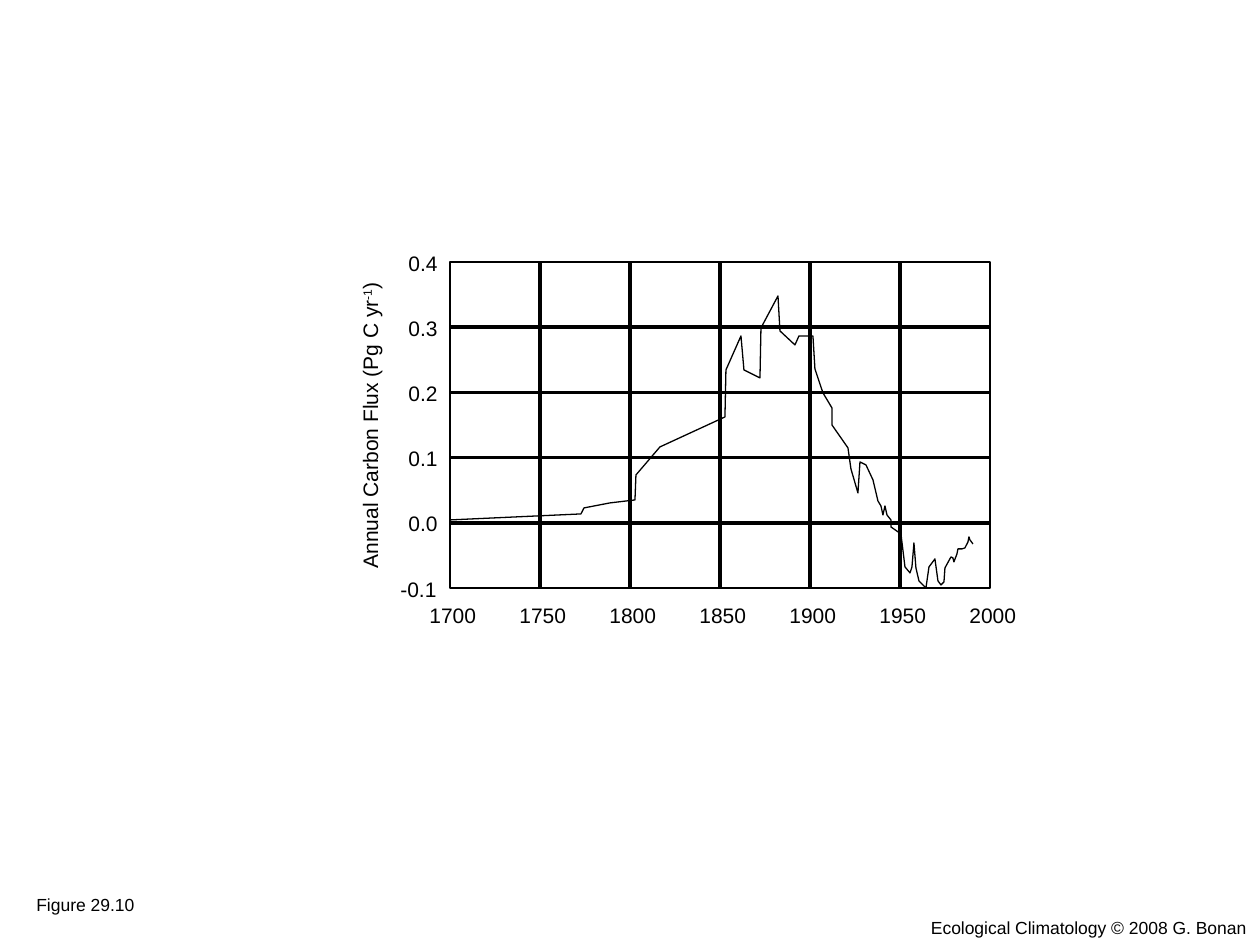
from pptx import Presentation
from pptx.dml.color import RGBColor
from pptx.enum.shapes import MSO_CONNECTOR
from pptx.enum.text import MSO_AUTO_SIZE, PP_ALIGN
from pptx.oxml.ns import qn
from pptx.util import Pt
from lxml.etree import SubElement

SCALE = 914400 / 126  # EMU in one px
COLORS = {"ink": "000000"}
FONT = "Arial"

YEARS = [1700, 1750, 1800, 1850, 1900, 1950, 2000]
FLUXES = ["0.4", "0.3", "0.2", "0.1", "0.0", "-0.1"]
# Curve points, in px from the top left corner of the plot
FLUX_CURVE = [
    (0, 258), (131, 252), (134, 246), (160, 241), (185, 238), (186, 213),
    (210, 185), (275, 155), (276, 108), (291, 74), (294, 108), (310, 116),
    (311, 66), (328, 34), (330, 69), (345, 83), (349, 74), (363, 74),
    (365, 107), (373, 131), (382, 146), (382, 163), (398, 186), (401, 207),
    (408, 231), (410, 200), (416, 203), (423, 218), (428, 239), (431, 244),
    (433, 253), (435, 244), (437, 253), (441, 258), (441, 265), (451, 272),
    (455, 305), (460, 311), (462, 305), (464, 281), (466, 306), (469, 319),
    (476, 326), (479, 305), (485, 297), (488, 319), (491, 323), (494, 320),
    (495, 306), (501, 295), (503, 296), (504, 300), (507, 292), (508, 287),
    (512, 287), (515, 286), (518, 280), (519, 275), (520, 278), (523, 282),
]


def px(length):
    return round(length * SCALE)


def ink():
    return RGBColor.from_string(COLORS["ink"])


def add_text(slide, box, runs, size=12, align=PP_ALIGN.LEFT):
    """Add one line of text; each run is (text, baseline shift)."""
    shape = slide.shapes.add_textbox(*map(px, box))
    frame = shape.text_frame
    frame.word_wrap = False
    frame.auto_size = MSO_AUTO_SIZE.SHAPE_TO_FIT_TEXT
    paragraph = frame.paragraphs[0]
    paragraph.alignment = align
    for text, baseline in runs:
        run = paragraph.add_run()
        run.text = text
        run.font.size = Pt(size)
        run.font.name = FONT
        run.font.color.rgb = ink()
        if baseline:
            run.font._element.set("baseline", str(baseline))
    return shape


def add_grid_line(slide, start, end):
    line = slide.shapes.add_connector(
        MSO_CONNECTOR.STRAIGHT, *map(px, (*start, *end)))
    line.line.color.rgb = ink()
    line.line.width = Pt(0)
    SubElement(line._element.spPr, qn("a:effectLst"))


def add_outline(slide, points, close=False):
    builder = slide.shapes.build_freeform(*points[0], scale=SCALE)
    builder.add_line_segments(points[1:], close=close)
    shape = builder.convert_to_shape()
    shape.shadow.inherit = False
    shape.fill.background()
    shape.line.color.rgb = ink()
    shape.line.width = Pt(0.75)


def add_plot(slide, left, top, width, height):
    right, bottom = left + width, top + height
    columns = [left + width * i / (len(YEARS) - 1) for i in range(len(YEARS))]
    rows = [top + height * i / (len(FLUXES) - 1) for i in range(len(FLUXES))]

    # Curve, grid and frame
    add_outline(slide, [(left + x, top + y) for x, y in FLUX_CURVE])
    for y in rows[1:-1]:
        add_grid_line(slide, (left, y), (right, y))
    for x in columns[1:-1]:
        add_grid_line(slide, (x, bottom), (x, top))
    add_outline(slide, [(left, top), (right, top), (right, bottom),
                        (left, bottom)], close=True)

    # Axis labels
    for x, year in zip(columns, YEARS):
        add_text(slide, (x - 33, bottom + 8, 72, 38), [(str(year), 0)])
    for y, flux in zip(rows, FLUXES):
        label_width = 62 if flux.startswith("-") else 54
        add_text(slide, (left - label_width, y - 18, label_width, 38),
                 [(flux, 0)])

    # Vertical axis title, turned about its centre
    title = add_text(
        slide, (left - 236, top + height / 2 - 19, 312, 38),
        [("Annual Carbon Flux (Pg C yr", 0), ("-1", 30000), (")", 0)])
    title.rotation = 270


def add_footer(slide, left, top, width, height):
    add_text(slide, (left + 24, top, 123, 34), [("Figure 29.10", 0)], size=10)
    add_text(slide, (left + width - 343, top + height - 34, 343, 34),
             [("Ecological Climatology © 2008 G. Bonan", 0)],
             size=10, align=PP_ALIGN.CENTER)


def main():
    presentation = Presentation()
    presentation.slide_width = px(1260)
    presentation.slide_height = px(945)
    slide = presentation.slides.add_slide(presentation.slide_layouts[6])
    add_plot(slide, 450, 262, 540, 326)
    add_footer(slide, 0, 888, 1260, 57)
    presentation.save("out.pptx")


if __name__ == "__main__":
    main()
